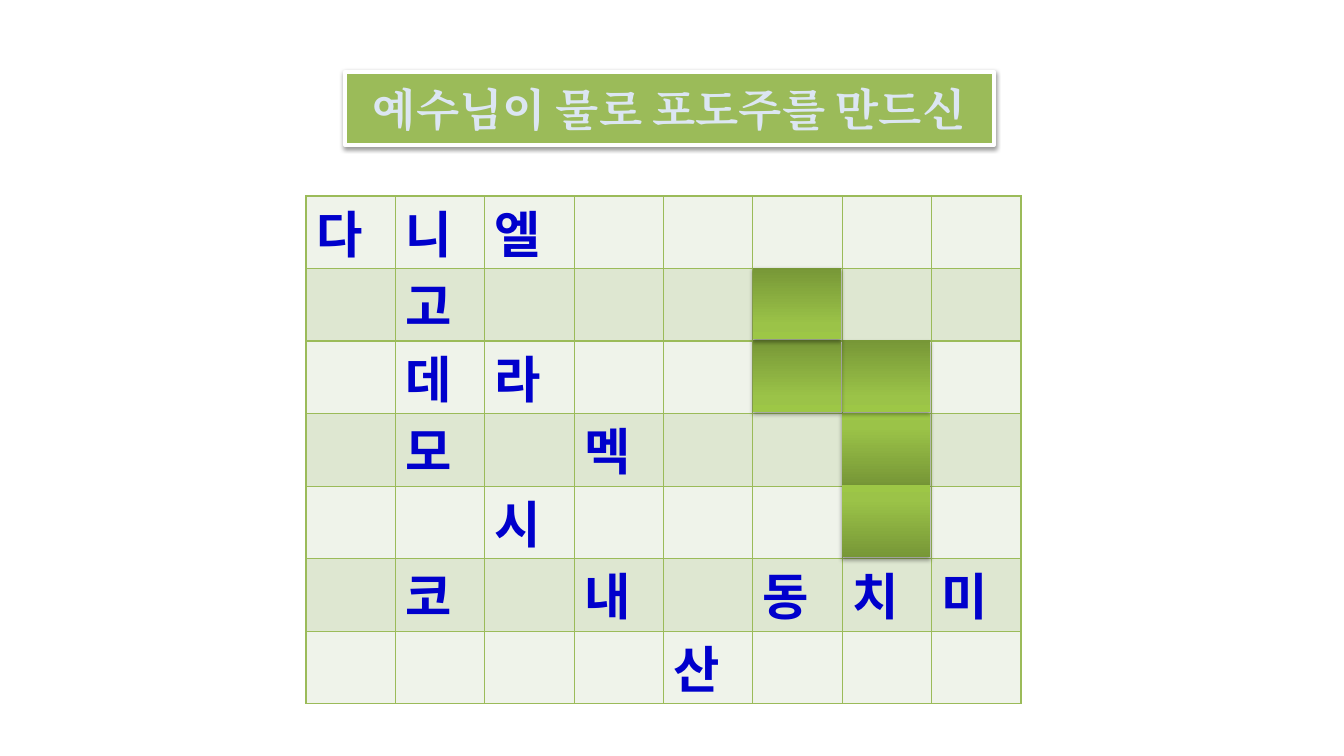
from pptx import Presentation
from pptx.dml.color import RGBColor
from pptx.enum.shapes import MSO_SHAPE
from pptx.enum.text import MSO_ANCHOR, MSO_AUTO_SIZE, PP_ALIGN
from pptx.oxml import parse_xml
from pptx.oxml.ns import nsdecls, qn
from pptx.util import Pt
from copy import deepcopy

RECT = MSO_SHAPE.RECTANGLE
MIDDLE = MSO_ANCHOR.MIDDLE
CENTER = PP_ALIGN.CENTER
FIXED = MSO_AUTO_SIZE.NONE

WIDE, HIGH = 1344, 756
SCALE = 12192000 / WIDE
COLORS = {
    "green": "9BBB59", "white": "FFFFFF", "pale": "DCE6F2", "blue": "0000CC",
    "light": "EFF3EA", "dark": "DEE7D1",
    "deep": "779737", "leaf": "9BC348", "lime": "9DC746",
}
LEFT, TOP, GRID_W, GRID_H = 306, 196, 715, 508
COLS, ROWS = 8, 7
# Letters by (row, first column)
WORDS = {
    (0, 0): "다니엘", (1, 1): "고", (2, 1): "데라", (3, 1): "모", (3, 3): "멕",
    (4, 2): "시", (5, 1): "코", (5, 3): "내", (5, 5): "동치미", (6, 4): "산",
}
# Column, row and gradient angle of each cover
DOWN, UP = 270, 90
COVERS = [(6, 3, UP), (6, 4, UP), (6, 2, DOWN), (5, 2, DOWN), (5, 1, DOWN)]


def px(n):
    return round(n * SCALE)


def rgb(name):
    return RGBColor.from_string(COLORS[name])


class Deck:
    def __init__(self):
        self.prs = Presentation()
        self.prs.slide_width, self.prs.slide_height = px(WIDE), px(HIGH)
        self.slide = self.prs.slides.add_slide(self.prs.slide_layouts[5])

    def text(self, para, words, font, size, color):
        run = para.add_run()
        run.text = words
        run.font.name = font
        run.font.size = Pt(size)
        run.font.bold = True
        run.font.color.rgb = rgb(color)
        # Hangul takes its face from a:ea
        face = parse_xml(f'<a:ea {nsdecls("a")} typeface="{font}"/>')
        run.font._element.find(qn("a:latin")).addnext(face)

    def place(self, shape, x, y, w, h):
        shape.left, shape.top, shape.width, shape.height = map(px, (x, y, w, h))

    def shade(self, shape, dist, alpha):
        shape._element.spPr.append(parse_xml(
            f'<a:effectLst {nsdecls("a")}><a:outerShdw blurRad="{Pt(3.1)}" '
            f'dist="{Pt(dist)}" dir="5400000" rotWithShape="0">'
            f'<a:srgbClr val="000000"><a:alpha val="{alpha}000"/></a:srgbClr>'
            '</a:outerShdw></a:effectLst>'))

    def title(self, words, x, y, w, h):
        shape = self.slide.shapes.title
        self.place(shape, x, y, w, h)
        shape._element.spPr.append(parse_xml(
            f'<a:prstGeom {nsdecls("a")} prst="roundRect"><a:avLst>'
            '<a:gd name="adj" fmla="val 21600"/></a:avLst></a:prstGeom>'))
        shape.fill.solid()
        shape.fill.fore_color.rgb = rgb("green")
        shape.line.color.rgb = rgb("white")
        shape.line.width = Pt(3)
        self.shade(shape, 1.6, 38)
        frame = shape.text_frame
        frame.auto_size = FIXED
        frame.word_wrap = False
        frame.vertical_anchor = MIDDLE
        para = frame.paragraphs[0]
        para.alignment = CENTER
        self.text(para, words, "Cambria", 32, "pale")

    def edge(self, cell):
        """Draw all four borders; call before the cell is filled."""
        props = cell._tc.get_or_add_tcPr()
        for side in "LRTB":
            props.append(parse_xml(
                f'<a:ln{side} {nsdecls("a")} w="{Pt(1)}"><a:solidFill>'
                f'<a:srgbClr val="{COLORS["green"]}"/></a:solidFill></a:ln{side}>'))

    def grid(self, words):
        table = self.slide.shapes.add_table(
            ROWS, COLS, px(LEFT), px(TOP), px(GRID_W), px(GRID_H)).table
        for col in table.columns:
            col.width = px(GRID_W / COLS)
        for r, row in enumerate(table.rows):
            row.height = px(GRID_H / ROWS)
            for cell in row.cells:
                self.edge(cell)
                cell.fill.solid()
                cell.fill.fore_color.rgb = rgb("dark" if r % 2 else "light")
                cell.vertical_anchor = MIDDLE
                cell.margin_top, cell.margin_bottom = px(19), 0
        for (r, start), word in words.items():
            for c, letter in enumerate(word, start):
                para = table.cell(r, c).text_frame.paragraphs[0]
                para.line_spacing = Pt(37)
                self.text(para, letter, "Noto Sans CJK KR", 36, "blue")

    def cover(self, col, row, angle):
        shape = self.slide.shapes.add_shape(RECT, 0, 0, 0, 0)
        self.place(shape, LEFT + col * GRID_W / COLS,
                   TOP + row * GRID_H / ROWS - 1, 88, 72)
        fill = shape.fill
        fill.gradient()
        fill.gradient_angle = angle
        stops = shape._element.spPr.find(qn("a:gradFill")).find(qn("a:gsLst"))
        stops.append(deepcopy(stops[-1]))
        tones = ((0, "deep"), (0.8, "leaf"), (1, "lime"))
        for stop, (pos, name) in zip(fill.gradient_stops, tones):
            stop.position = pos
            stop.color.rgb = rgb(name)
        shape.line.fill.background()
        self.shade(shape, 1.8, 35)


def main():
    deck = Deck()
    deck.title("예수님이 물로 포도주를 만드신", 345, 72, 649, 73)
    deck.grid(WORDS)
    for spot in COVERS:
        deck.cover(*spot)
    deck.prs.save("out.pptx")


if __name__ == "__main__":
    main()
